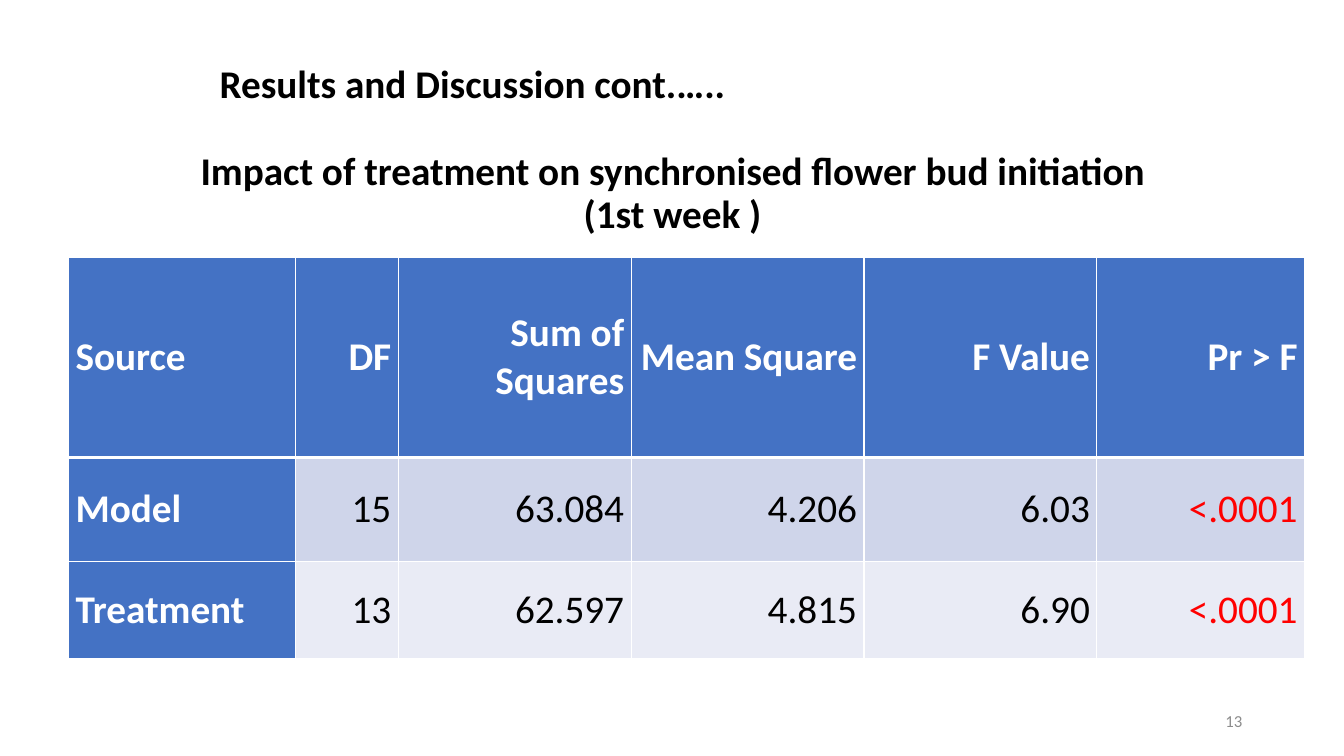
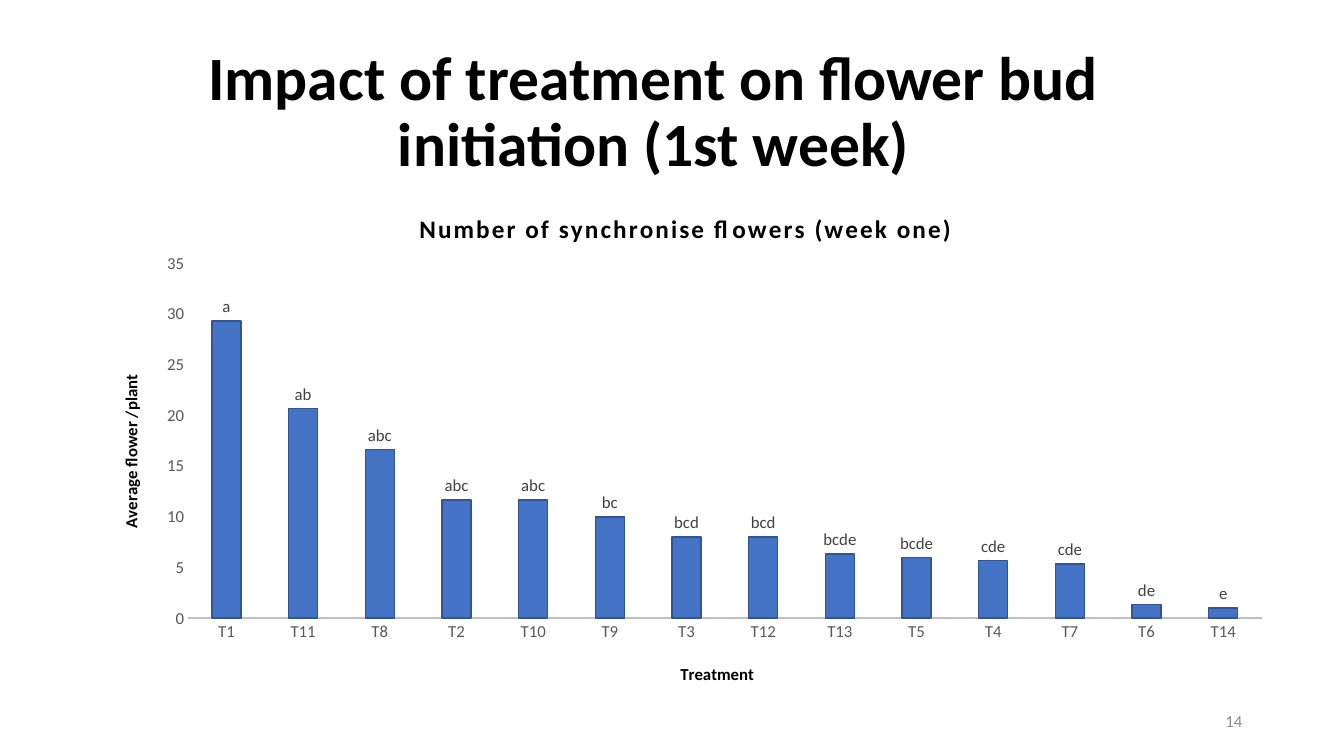
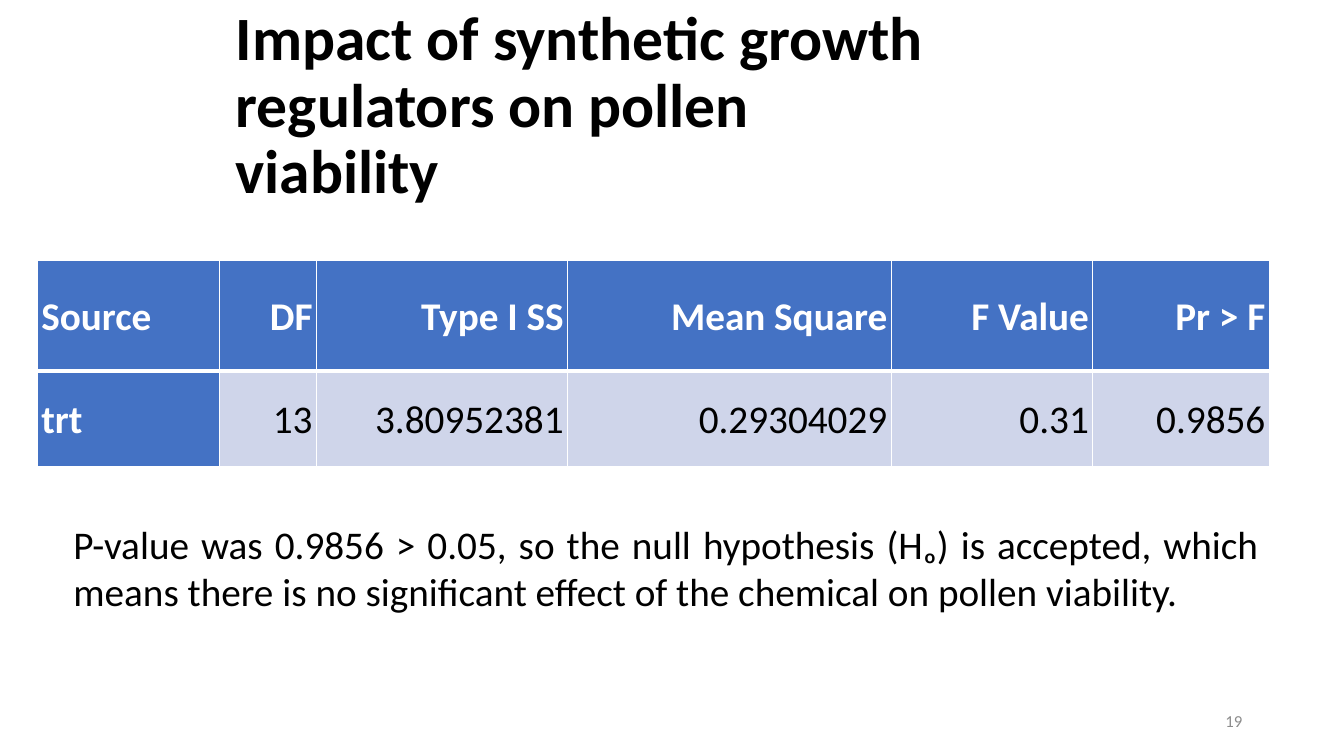
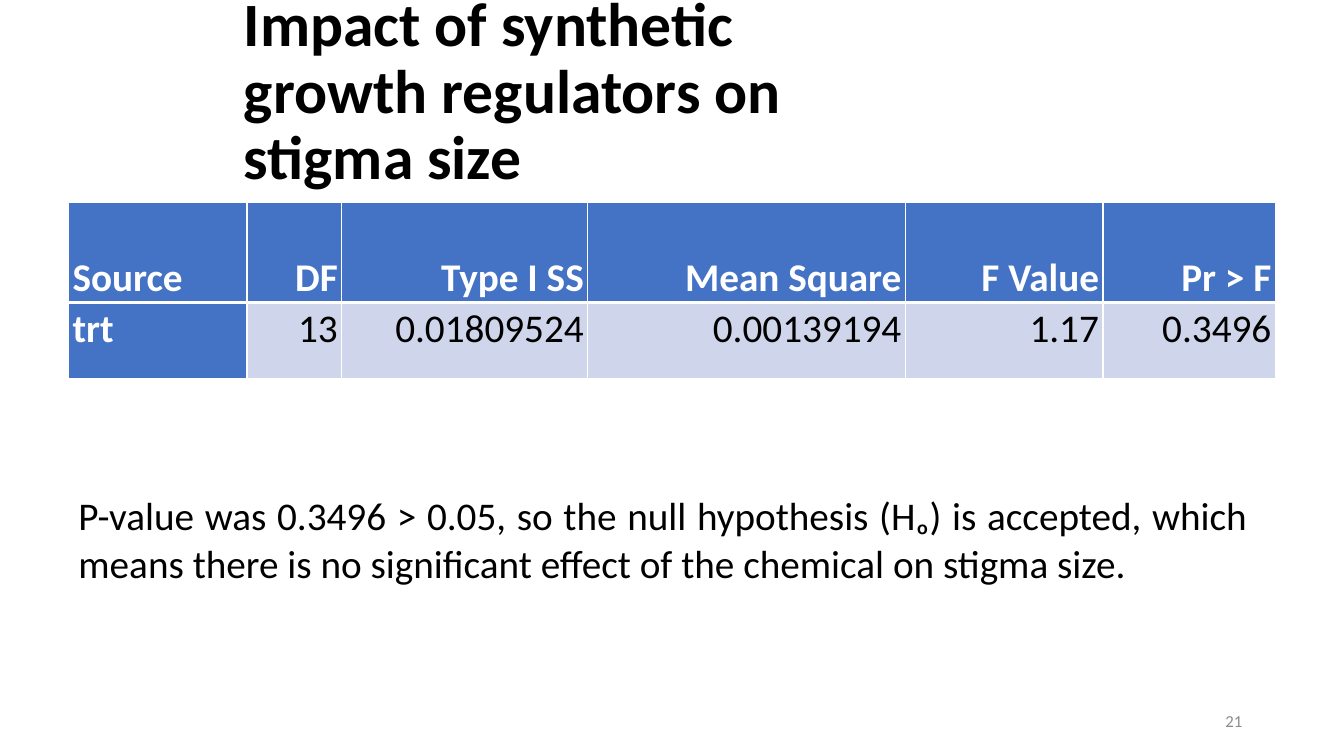
import dataclasses

import lxml.etree
import pptx
import pptx.chart.data
import pptx.dml.color
import pptx.enum.chart
import pptx.enum.text
import pptx.oxml.ns
import pptx.util

Inches = pptx.util.Inches
Pt = pptx.util.Pt
ALIGN = pptx.enum.text.PP_ALIGN
ANCHOR = pptx.enum.text.MSO_ANCHOR
qn = pptx.oxml.ns.qn


@dataclasses.dataclass(frozen=True)
class Theme:
    font: str = "Calibri"
    black: str = "000000"
    white: str = "FFFFFF"
    accent: str = "4472C4"
    accent_dark: str = "325491"
    bands: tuple = ("CFD5EA", "E9EBF5")
    alert: str = "FF0000"
    number: str = "8C8C8C"
    axis_text: str = "595959"
    axis_line: str = "BFBFBF"
    label: str = "404040"
    title_size: int = 44
    body_size: int = 28
    chart_title_size: int = 18
    small_size: int = 12


THEME = Theme()
NUMBER_BOX = (9.42, 6.95, 3, 0.4)


# Shared formatting
def rgb(value):
    return pptx.dml.color.RGBColor.from_string(value)


def set_values(target, values):
    for name, value in values.items():
        setattr(target, name, value)


def style_font(font, size, color, bold=False):
    set_values(font, {"name": THEME.font, "size": Pt(size), "bold": bold})
    font.color.rgb = rgb(color)


def write_paragraph(frame, text, size, color, bold=False, **paragraph_format):
    paragraph = frame.paragraphs[0]
    paragraph.text = text
    set_values(paragraph, paragraph_format)
    for run in paragraph.runs:
        style_font(run.font, size, color, bold)
    return paragraph


def add_text(slide, box, text, size, color=THEME.black, bold=False,
             anchor=ANCHOR.TOP, **paragraph_format):
    frame = slide.shapes.add_textbox(*map(Inches, box)).text_frame
    set_values(frame, {"word_wrap": True, "vertical_anchor": anchor})
    write_paragraph(frame, text, size, color, bold, **paragraph_format)
    return frame


# Title, page number and conclusion
def add_title(slide, box, text, size=THEME.title_size, alignment=ALIGN.LEFT):
    add_text(slide, box, text, size, bold=True, anchor=ANCHOR.MIDDLE,
             alignment=alignment, line_spacing=0.9)


def add_number(slide, number):
    add_text(slide, NUMBER_BOX, str(number), THEME.small_size, THEME.number,
             anchor=ANCHOR.MIDDLE, alignment=ALIGN.RIGHT)


def add_conclusion(slide, box, p_value, trait):
    text = (f"P-value was {p_value} > 0.05, so the null hypothesis (Hₒ) is accepted, "
            f"which means there is no significant effect of the chemical on {trait}.")
    frame = add_text(slide, box, text, THEME.body_size, alignment=ALIGN.JUSTIFY)
    frame.auto_size = pptx.enum.text.MSO_AUTO_SIZE.SHAPE_TO_FIT_TEXT


# Analysis of variance table
def set_borders(cell, widths):
    properties = cell._tc.get_or_add_tcPr()
    for index, (side, width) in enumerate(widths.items()):
        line = lxml.etree.Element(qn(f"a:ln{side}"), w=str(Pt(width)))
        fill = lxml.etree.SubElement(line, qn("a:solidFill"))
        lxml.etree.SubElement(fill, qn("a:srgbClr"), val=THEME.white)
        properties.insert(index, line)


def add_anova_table(slide, box, rows, column_widths, row_heights, side_margin,
                    anchors=(ANCHOR.MIDDLE, ANCHOR.MIDDLE), **paragraph_format):
    shape = slide.shapes.add_table(len(rows), len(column_widths), *map(Inches, box))
    table = shape.table
    set_values(table, {"first_row": True, "first_col": True, "horz_banding": False})
    for column, width in zip(table.columns, column_widths):
        column.width = Inches(width)
    for row, height in zip(table.rows, row_heights):
        row.height = Inches(height)

    for row_index, values in enumerate(rows):
        for column_index, value in enumerate(values):
            cell = table.cell(row_index, column_index)
            heading = row_index == 0 or column_index == 0
            color = THEME.white if heading else THEME.black
            if value.startswith("<"):
                color = THEME.alert
            set_values(cell, {
                "margin_left": Inches(side_margin), "margin_right": Inches(side_margin),
                "margin_top": 0, "margin_bottom": 0,
                "vertical_anchor": anchors[min(row_index, 1)],
            })
            cell.fill.solid()
            cell.fill.fore_color.rgb = rgb(
                THEME.accent if heading else THEME.bands[(row_index - 1) % 2])
            set_borders(cell, {"L": 1, "R": 1, "T": 3 if row_index == 1 else 1,
                               "B": 3 if row_index == 0 else 1})
            write_paragraph(cell.text_frame, value, THEME.body_size, color, heading,
                            alignment=ALIGN.RIGHT if column_index else ALIGN.LEFT,
                            **paragraph_format)


# Flower chart
def set_layout(element, **fractions):
    layout = element.find(qn("c:layout"))
    if layout is None:
        layout = lxml.etree.Element(qn("c:layout"))
        element.insert(0 if element.find(qn("c:tx")) is None else 1, layout)
    manual = lxml.etree.SubElement(layout, qn("c:manualLayout"))
    if "w" in fractions:
        lxml.etree.SubElement(manual, qn("c:layoutTarget"), val="inner")
    for name in ("x", "y"):
        lxml.etree.SubElement(manual, qn(f"c:{name}Mode"), val="edge")
    for name, value in fractions.items():
        lxml.etree.SubElement(manual, qn(f"c:{name}"), val=str(value))


def write_chart_title(title, text, size, x, y):
    paragraph = write_paragraph(title.text_frame, text, size, THEME.black, True)
    set_layout(title._element, x=x, y=y)
    return paragraph


def add_flower_chart(slide, box, points):
    chart_data = pptx.chart.data.CategoryChartData()
    chart_data.categories = [treatment for treatment, _, _ in points]
    chart_data.add_series("Series 1", [value for _, value, _ in points])
    chart = slide.shapes.add_chart(
        pptx.enum.chart.XL_CHART_TYPE.COLUMN_CLUSTERED,
        *map(Inches, box), chart_data).chart
    style_font(chart.font, 10, THEME.black)
    chart.has_legend = False
    set_layout(chart._chartSpace.chart.plotArea, x=0.08, y=0.15, w=0.9, h=0.69)

    # Titles
    heading = write_chart_title(chart.chart_title,
                                "Number of synchronise flowers (week one)",
                                THEME.chart_title_size, 0.27, 0.04)
    heading.runs[0]._r.get_or_add_rPr().set("spc", "150")
    write_chart_title(chart.category_axis.axis_title, "Treatment",
                      THEME.small_size, 0.49, 0.92)
    value_title = chart.value_axis.axis_title
    write_chart_title(value_title, "Average flower /plant", THEME.small_size, 0.02, 0.36)
    value_title.text_frame._txBody.bodyPr.set("rot", "-5400000")

    # Axes
    for axis in (chart.category_axis, chart.value_axis):
        set_values(axis, {
            "has_major_gridlines": False,
            "major_tick_mark": pptx.enum.chart.XL_TICK_MARK.NONE,
            "minor_tick_mark": pptx.enum.chart.XL_TICK_MARK.NONE,
        })
        style_font(axis.tick_labels.font, THEME.small_size, THEME.axis_text)
    set_values(chart.value_axis, {"minimum_scale": 0, "maximum_scale": 35, "major_unit": 5})
    chart.value_axis.format.line.fill.background()
    axis_line = chart.category_axis.format.line
    axis_line.color.rgb = rgb(THEME.axis_line)
    axis_line.width = Pt(1.5)

    # Columns and their group letters
    plot = chart.plots[0]
    set_values(plot, {"gap_width": 164, "overlap": -22, "vary_by_categories": False})
    series = plot.series[0]
    series.format.fill.solid()
    series.format.fill.fore_color.rgb = rgb(THEME.accent)
    series.format.line.color.rgb = rgb(THEME.accent_dark)
    series.format.line.width = Pt(1)
    outside = pptx.enum.chart.XL_LABEL_POSITION.OUTSIDE_END
    set_values(series.data_labels, {"show_value": True, "position": outside})
    style_font(series.data_labels.font, THEME.small_size, THEME.label)
    for index, (_, _, letters) in enumerate(points):
        label = series.points[index].data_label
        write_paragraph(label.text_frame, letters, THEME.small_size, THEME.label)
        label.position = outside


# Slides
def build_bud_table_slide(slide):
    add_title(slide, (0.92, 0.4, 6.37, 0.91), "Results and Discussion cont.…..",
              THEME.body_size, ALIGN.RIGHT)
    add_text(slide, (0.92, 1.46, 11.5, 5.3),
             "Impact of treatment on synchronised flower bud initiation\v(1st week )",
             THEME.body_size, bold=True, alignment=ALIGN.CENTER, line_spacing=0.9)
    rows = [
        ("Source", "DF", "Sum of Squares", "Mean Square", "F Value", "Pr > F"),
        ("Model", "15", "63.084", "4.206", "6.03", "<.0001"),
        ("Treatment", "13", "62.597", "4.815", "6.90", "<.0001"),
    ]
    add_anova_table(slide, (0.68, 2.55, 12.26, 3.98), rows,
                    (2.25, 1.02, 2.31, 2.31, 2.31, 2.06), (1.99, 1.03, 0.96), 0.07)


def build_bud_chart_slide(slide):
    add_title(slide, (1.91, 0.4, 9.15, 1.45),
              "Impact of treatment on flower bud initiation (1st week)",
              alignment=ALIGN.CENTER)
    points = [
        ("T1", 29.33, "a"), ("T11", 20.67, "ab"), ("T8", 16.67, "abc"),
        ("T2", 11.67, "abc"), ("T10", 11.67, "abc"), ("T9", 10, "bc"),
        ("T3", 8, "bcd"), ("T12", 8, "bcd"), ("T13", 6.33, "bcde"),
        ("T5", 6, "bcde"), ("T4", 5.67, "cde"), ("T7", 5.33, "cde"),
        ("T6", 1.33, "de"), ("T14", 1, "e"),
    ]
    add_flower_chart(slide, (0.92, 1.85, 11.83, 5.1), points)


def build_trait_slide(slide, trait, title_box, table_box, column_widths, row_heights,
                      anchors, results, conclusion_box):
    add_title(slide, title_box, f"Impact of synthetic growth regulators on {trait}")
    rows = [("Source", "DF", "Type I SS", "Mean Square", "F Value", "Pr > F"),
            ("trt", "13", *results)]
    add_anova_table(slide, table_box, rows, column_widths, row_heights, 0.04, anchors,
                    line_spacing=1.06, space_after=Pt(3))
    add_conclusion(slide, conclusion_box, results[-1], trait)


def build_pollen_slide(slide):
    build_trait_slide(
        slide, "pollen viability", (2.24, 0.34, 7.27, 1.45), (0.37, 2.58, 12.21, 2.05),
        (1.81, 0.96, 2.49, 3.21, 2, 1.75), (1.1, 0.95), (ANCHOR.MIDDLE, ANCHOR.MIDDLE),
        ("3.80952381", "0.29304029", "0.31", "0.9856"), (0.63, 5.11, 11.95, 1.04))


def build_stigma_slide(slide):
    build_trait_slide(
        slide, "stigma size", (2.32, 0.2, 6.8, 1.45), (0.68, 2.01, 11.98, 1.74),
        (1.77, 0.94, 2.44, 3.15, 1.96, 1.71), (0.99, 0.76), (ANCHOR.BOTTOM, ANCHOR.TOP),
        ("0.01809524", "0.00139194", "1.17", "0.3496"), (0.68, 4.83, 11.79, 1.04))


def main():
    presentation = pptx.Presentation()
    presentation.slide_width = Inches(13.33)
    presentation.slide_height = Inches(7.5)
    builders = {13: build_bud_table_slide, 14: build_bud_chart_slide,
                19: build_pollen_slide, 21: build_stigma_slide}
    for number, build in builders.items():
        slide = presentation.slides.add_slide(presentation.slide_layouts[6])
        build(slide)
        add_number(slide, number)
    presentation.save("out.pptx")


if __name__ == "__main__":
    main()
